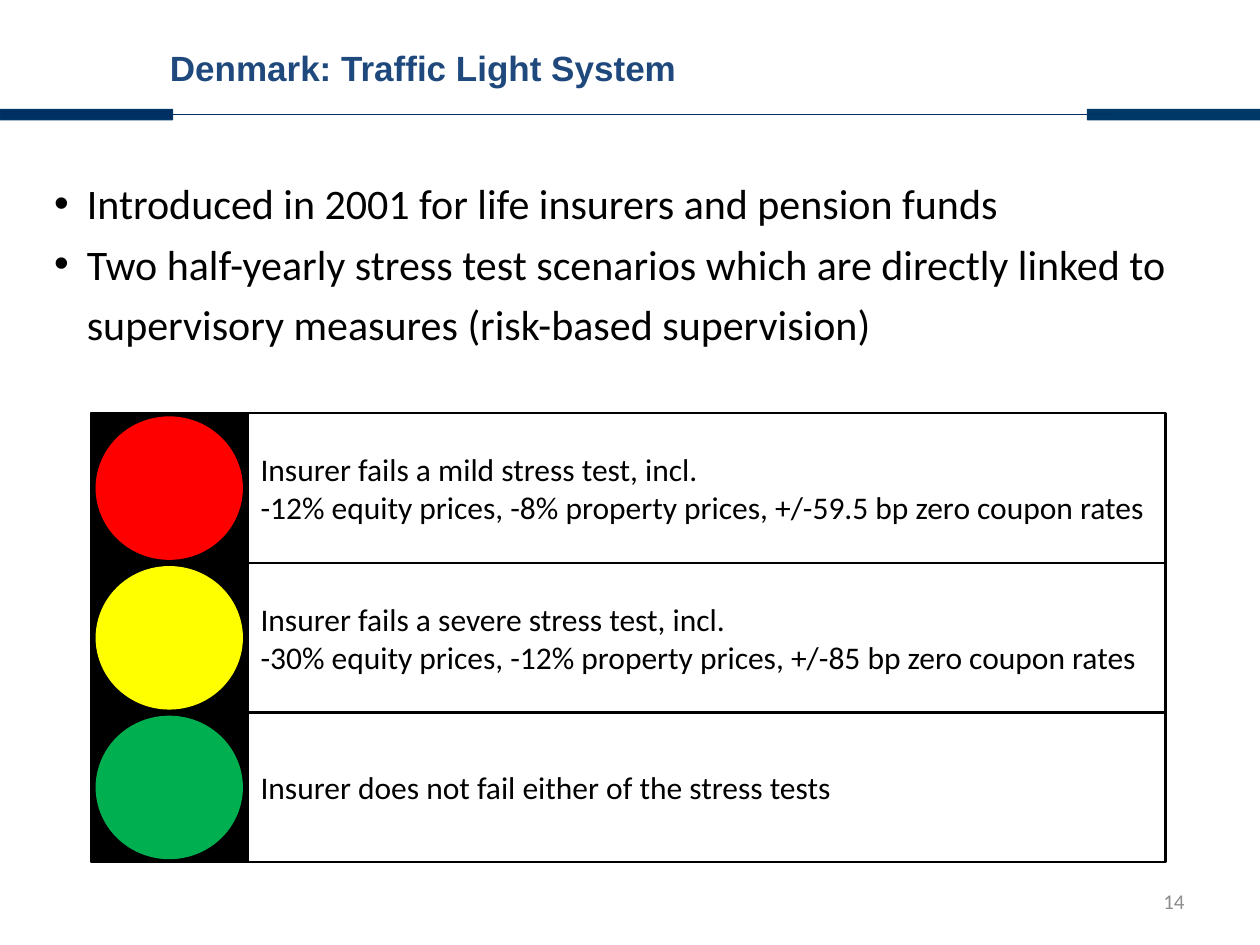
import pptx
import pptx.util
import pptx.dml.color
import pptx.enum.shapes
import pptx.enum.text
import pptx.oxml.ns
import lxml.etree

Pt = pptx.util.Pt
SHAPE = pptx.enum.shapes.MSO_SHAPE
ALIGN = pptx.enum.text.PP_ALIGN
ANCHOR = pptx.enum.text.MSO_ANCHOR
qn = pptx.oxml.ns.qn

TITLE = "Denmark: Traffic Light System"
BULLETS = [
    "Introduced in 2001 for life insurers and pension funds",
    "Two half-yearly stress test scenarios which are directly linked to "
    "supervisory measures (risk-based supervision)",
]
LIGHTS = [
    ("FF0000", ["Insurer fails a mild stress test, incl.",
                "-12% equity prices, -8% property prices, +/-59.5 bp zero coupon rates"]),
    ("FFFF00", ["Insurer fails a severe stress test, incl.",
                "-30% equity prices, -12% property prices, +/-85 bp zero coupon rates"]),
    ("00B050", ["Insurer does not fail either of the stress tests"]),
]
PAGE_NUMBER = "14"

BLACK, NAVY, DEEP_NAVY = "000000", "003867", "002F63"
SLIDE_W, SLIDE_H = 720, 540
BAND_W, BAND_TOP, BAND_H = 98.6, 62.6, 5.8
ROWS_TOP, ROW_H = 236.2, 85.5
HOUSING_LEFT, HOUSING_W = 52, 89.5
OUTCOME_LEFT, OUTCOME_W = 141.8, 524.2
LAMP_W, LAMP_H = 84.2, 82


def rgb(color):
    return pptx.dml.color.RGBColor.from_string(color)


def add_box(kind, left, top, width, height, fill=None, line=None, weight=1.25):
    box = slide.shapes.add_shape(kind, Pt(left), Pt(top), Pt(width), Pt(height))
    box.shadow.inherit = False
    if fill:
        box.fill.solid()
        box.fill.fore_color.rgb = rgb(fill)
    else:
        box.fill.background()
    if line:
        box.line.color.rgb = rgb(line)
        box.line.width = Pt(weight)
    else:
        box.line.fill.background()
    return box


def write(shape, lines, size, color=BLACK, font="Calibri", bold=False,
          align=ALIGN.LEFT, anchor=ANCHOR.MIDDLE):
    frame = shape.text_frame
    frame.text = "\n".join(lines)
    frame.word_wrap = True
    frame.vertical_anchor = anchor
    for paragraph in frame.paragraphs:
        paragraph.alignment = align
        for run in paragraph.runs:
            run.font.size, run.font.name, run.font.bold = Pt(size), font, bold
            run.font.color.rgb = rgb(color)
    return frame


def add_text(left, top, width, height, lines, size, **style):
    box = slide.shapes.add_textbox(Pt(left), Pt(top), Pt(width), Pt(height))
    return write(box, lines, size, **style)


def set_bullet(paragraph, indent):
    properties = paragraph._p.get_or_add_pPr()
    properties.set("marL", str(Pt(indent)))
    properties.set("indent", str(-Pt(indent)))
    lxml.etree.SubElement(properties, qn("a:buFont")).set("typeface", "Arial")
    lxml.etree.SubElement(properties, qn("a:buChar")).set("char", "•")


deck = pptx.Presentation()
deck.slide_width, deck.slide_height = Pt(SLIDE_W), Pt(SLIDE_H)
slide = deck.slides.add_slide(deck.slide_layouts[6])

# Header rule
for band_left, band_fill in [(0, DEEP_NAVY), (SLIDE_W - BAND_W, NAVY)]:
    band = add_box(SHAPE.ROUNDED_RECTANGLE, band_left, BAND_TOP, BAND_W, BAND_H,
                   band_fill, NAVY, 0.75)
    band.adjustments[0] = 0.02
rule_y = BAND_TOP + BAND_H / 2
rule = slide.shapes.add_connector(pptx.enum.shapes.MSO_CONNECTOR.STRAIGHT,
                                  Pt(73.4), Pt(rule_y), Pt(635.8), Pt(rule_y))
rule.line.color.rgb = rgb(DEEP_NAVY)
rule.line.width = Pt(0.75)
lxml.etree.SubElement(rule._element.spPr, qn("a:effectLst"))

# Page number, title and bullets
add_text(516, 500.4, 168, 28.8, [PAGE_NUMBER], 12, color="8C8C8C", align=ALIGN.RIGHT)
add_text(90, 23, 616.3, 31.7, [TITLE], 20, color="1F497D", font="Arial", bold=True,
         anchor=ANCHOR.TOP)
introduction = add_text(23.8, 92.2, 678.2, 429.8, BULLETS, 24, anchor=ANCHOR.TOP)
for point in introduction.paragraphs:
    point.line_spacing = 1.2
    set_bullet(point, 18.7)

# Traffic light: outcomes and housing first, lamps on top
for row, (_, outcome) in enumerate(LIGHTS):
    row_top = ROWS_TOP + row * ROW_H
    write(add_box(SHAPE.RECTANGLE, OUTCOME_LEFT, row_top, OUTCOME_W, ROW_H, line=BLACK),
          outcome, 18)
    add_box(SHAPE.RECTANGLE, HOUSING_LEFT, row_top, HOUSING_W, ROW_H, BLACK, BLACK)
for row, (lamp_color, _) in enumerate(LIGHTS):
    add_box(SHAPE.OVAL, HOUSING_LEFT + (HOUSING_W - LAMP_W) / 2,
            ROWS_TOP + row * ROW_H + (ROW_H - LAMP_H) / 2, LAMP_W, LAMP_H, lamp_color)

deck.save("out.pptx")
